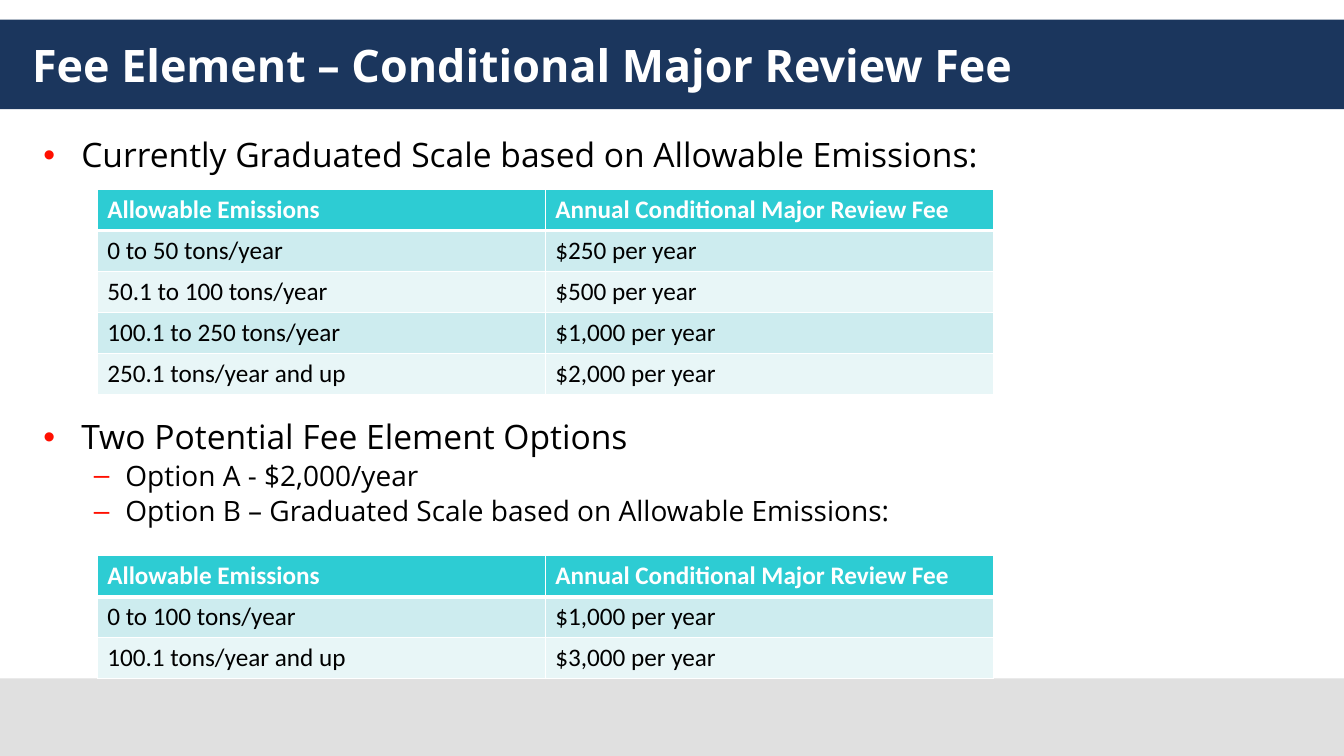
from lxml import etree
from pptx import Presentation
from pptx import util as u
from pptx.dml.color import RGBColor
from pptx.enum import shapes, text
from pptx.oxml import ns

COLORS = {
    "navy": "1B365D", "gray": "E0E0E0", "white": "FFFFFF", "black": "000000",
    "red": "FF0F00", "teal": "2DCCD3", "band": "CDECEF", "light": "E8F6F7",
}
HEADER = ("Allowable Emissions", "Annual Conditional Major Review Fee")
CURRENT_FEES = [
    ("0 to 50 tons/year", "$250 per year"),
    ("50.1 to 100 tons/year", "$500 per year"),
    ("100.1 to 250 tons/year", "$1,000 per year"),
    ("250.1 tons/year and up", "$2,000 per year"),
]
OPTION_B_FEES = [
    ("0 to 100 tons/year", "$1,000 per year"),
    ("100.1 tons/year and up", "$3,000 per year"),
]
BULLETS = [("•", 24, 27, -27), ("–", 20, 58.5, -22.5)]
ROW_HEIGHT = 29.25


def rgb(name):
    """Return the named colour."""
    return RGBColor.from_string(COLORS[name])


def add_span(para, words, size, font, color, bold=False):
    """Add one formatted run to a paragraph."""
    span = para.add_run()
    span.text = words
    span.font.size = u.Pt(size)
    span.font.name = font
    span.font.bold = bold
    span.font.color.rgb = rgb(color)


def add_band(page, left, top, width, height, color):
    """Add a plain filled rectangle and return it."""
    band = page.shapes.add_shape(shapes.MSO_SHAPE.RECTANGLE, u.Pt(left), u.Pt(top), u.Pt(width), u.Pt(height))
    band.shadow.inherit = False
    band.fill.solid()
    band.fill.fore_color.rgb = rgb(color)
    band.line.fill.background()
    return band


def add_title(page, left, top, width, height, words):
    """Add the title band with its heading."""
    frame = add_band(page, left, top, width, height, "navy").text_frame
    frame.word_wrap = True
    frame.margin_left = u.Pt(23)
    frame.vertical_anchor = text.MSO_ANCHOR.MIDDLE
    para = frame.paragraphs[0]
    para.alignment = text.PP_ALIGN.LEFT
    add_span(para, words, 32, "Open Sans", "white", True)


def set_bullet(para, level):
    """Give a paragraph the indent and red bullet of its level."""
    mark, _, margin, indent = BULLETS[level]
    para.level = level
    props = para._p.get_or_add_pPr()
    props.set("marL", str(u.Pt(margin)))
    props.set("indent", str(u.Pt(indent)))
    color = etree.SubElement(props, ns.qn("a:buClr"))
    etree.SubElement(color, ns.qn("a:srgbClr"), val=COLORS["red"])
    etree.SubElement(props, ns.qn("a:buFont"), typeface="Arial")
    etree.SubElement(props, ns.qn("a:buChar"), char=mark)


def add_bullets(page, left, top, width, height, items):
    """Add a text box of (level, words) bullets."""
    box = page.shapes.add_textbox(u.Pt(left), u.Pt(top), u.Pt(width), u.Pt(height))
    frame = box.text_frame
    frame.word_wrap = True
    for index, (level, words) in enumerate(items):
        para = frame.add_paragraph() if index else frame.paragraphs[0]
        set_bullet(para, level)
        para.line_spacing = 0.9
        if index:
            para.space_before = u.Pt(3.5)
        add_span(para, words, BULLETS[level][1], "Open Sans", "black")


def set_borders(cell, bottom):
    """Draw white cell borders with the given bottom width."""
    props = cell._tc.get_or_add_tcPr()
    for side, width in (("L", 1), ("R", 1), ("T", 1), ("B", bottom)):
        line = etree.SubElement(props, ns.qn(f"a:ln{side}"), w=str(u.Pt(width)))
        fill = etree.SubElement(line, ns.qn("a:solidFill"))
        etree.SubElement(fill, ns.qn("a:srgbClr"), val=COLORS["white"])


def add_fee_table(page, left, top, width, fees):
    """Add a banded fee table under the shared header."""
    rows = [HEADER, *fees]
    frame = page.shapes.add_table(
        len(rows), len(HEADER), u.Pt(left), u.Pt(top), u.Pt(width), u.Pt(ROW_HEIGHT * len(rows)))
    for row, values in enumerate(rows):
        header = row == 0
        color = "teal" if header else ("light", "band")[row % 2]
        for column, words in enumerate(values):
            cell = frame.table.cell(row, column)
            set_borders(cell, 3 if header or row == 0 else 1)
            cell.fill.solid()
            cell.fill.fore_color.rgb = rgb(color)
            add_span(cell.text_frame.paragraphs[0], words, 18, "Calibri",
                     "white" if header else "black", header)


def main():
    """Build and save the fee slide."""
    deck = Presentation()
    deck.slide_width, deck.slide_height = u.Pt(960), u.Pt(540)
    page = deck.slides.add_slide(deck.slide_layouts[6])
    add_title(page, 0, 14, 960, 64, "Fee Element – Conditional Major Review Fee")
    add_band(page, 0, 484.5, 960, 55.5, "gray")
    add_bullets(page, 24, 95.5, 920, 38, [
        (0, "Currently Graduated Scale based on Allowable Emissions:")])
    add_fee_table(page, 69.5, 135.5, 640, CURRENT_FEES)
    add_bullets(page, 24, 297, 920, 95, [
        (0, "Two Potential Fee Element Options"),
        (1, "Option A - $2,000/year"),
        (1, "Option B – Graduated Scale based on Allowable Emissions:")])
    add_fee_table(page, 69.5, 397, 640, OPTION_B_FEES)
    deck.save("out.pptx")


if __name__ == "__main__":
    main()
